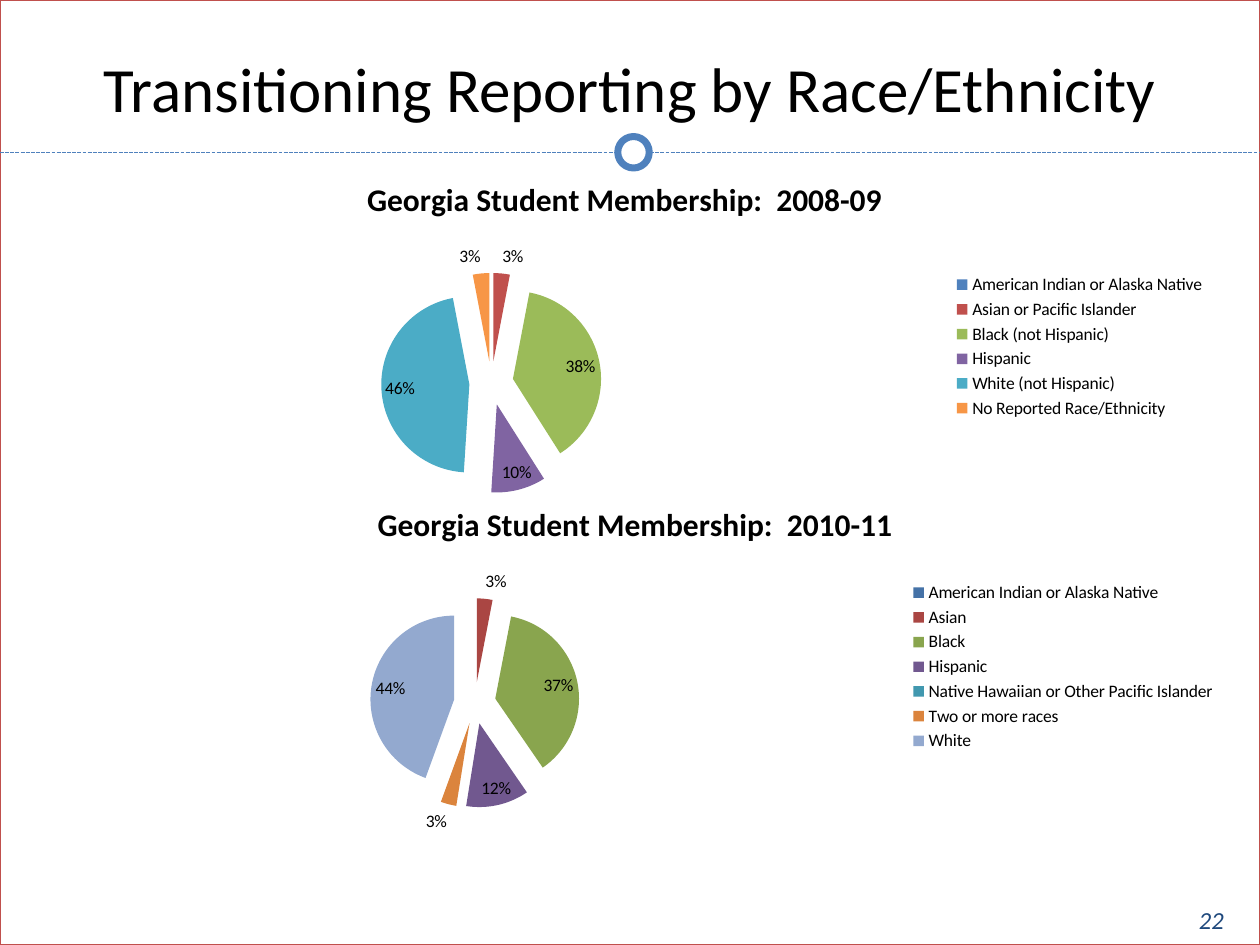
from dataclasses import dataclass

from lxml import etree
from pptx import Presentation
from pptx.chart.data import CategoryChartData
from pptx.dml.color import RGBColor
from pptx.enum import chart as charts, dml, shapes, text
from pptx.oxml import ns
from pptx.util import Pt

FONT = "Calibri"
BLACK = RGBColor(0, 0, 0)
WHITE = RGBColor(255, 255, 255)
NAVY = RGBColor(0x1F, 0x49, 0x7D)
RED = RGBColor(0xC0, 0x50, 0x4D)
BLUE = RGBColor(0x4F, 0x81, 0xBD)
GREEN = RGBColor(0x9B, 0xBB, 0x59)
PURPLE = RGBColor(0x80, 0x64, 0xA2)
AQUA = RGBColor(0x4B, 0xAC, 0xC6)
ORANGE = RGBColor(0xF7, 0x96, 0x46)
DARK_BLUE = RGBColor(0x45, 0x72, 0xA7)
DARK_RED = RGBColor(0xAA, 0x46, 0x43)
DARK_GREEN = RGBColor(0x89, 0xA5, 0x4E)
DARK_PURPLE = RGBColor(0x71, 0x58, 0x8F)
DARK_AQUA = RGBColor(0x41, 0x98, 0xAF)
DARK_ORANGE = RGBColor(0xDB, 0x84, 0x3D)
PALE_BLUE = RGBColor(0x93, 0xA9, 0xCF)

PAGE_WIDTH, PAGE_HEIGHT = 720, 540
RULE_Y = 87
RING_X, RING_SIZE = 362, 18


@dataclass(frozen=True)
class Frame:
    left: float
    top: float
    width: float
    height: float

    def lengths(self) -> tuple:
        return Pt(self.left), Pt(self.top), Pt(self.width), Pt(self.height)


@dataclass(frozen=True)
class Slice:
    label: str
    percent: int
    color: RGBColor


@dataclass(frozen=True)
class Membership:
    title: str
    frame: Frame
    slices: tuple[Slice, ...]


MEMBERSHIPS = (
    Membership("Georgia Student Membership:  2010-11", Frame(24, 276, 678, 210), (
        Slice("American Indian or Alaska Native", 0, DARK_BLUE),
        Slice("Asian", 3, DARK_RED),
        Slice("Black", 37, DARK_GREEN),
        Slice("Hispanic", 12, DARK_PURPLE),
        Slice("Native Hawaiian or Other Pacific Islander", 0, DARK_AQUA),
        Slice("Two or more races", 3, DARK_ORANGE),
        Slice("White", 44, PALE_BLUE),
    )),
    Membership("Georgia Student Membership:  2008-09", Frame(18, 90, 678, 216), (
        Slice("American Indian or Alaska Native", 0, BLUE),
        Slice("Asian or Pacific Islander", 3, RED),
        Slice("Black (not Hispanic)", 38, GREEN),
        Slice("Hispanic", 10, PURPLE),
        Slice("White (not Hispanic)", 46, AQUA),
        Slice("No Reported Race/Ethnicity", 3, ORANGE),
    )),
)


def style_font(font, size: float, color: RGBColor, bold: bool = False, italic: bool = False) -> None:
    font.name = FONT
    font.size = Pt(size)
    font.color.rgb = color
    font.bold = bold
    font.italic = italic


def add_text(page, frame: Frame, words: str, size: float, color: RGBColor,
             align=text.PP_ALIGN.LEFT, italic: bool = False) -> None:
    box = page.shapes.add_textbox(*frame.lengths())
    box.text_frame.word_wrap = True
    box.text_frame.vertical_anchor = text.MSO_ANCHOR.MIDDLE
    para = box.text_frame.paragraphs[0]
    para.alignment = align
    span = para.add_run()
    span.text = words
    style_font(span.font, size, color, italic=italic)


def add_outline(page, kind, frame: Frame, color: RGBColor, weight: float):
    shape = page.shapes.add_shape(kind, *frame.lengths())
    shape.shadow.inherit = False
    shape.fill.background()
    shape.line.color.rgb = color
    shape.line.width = Pt(weight)
    return shape


def add_rule(page) -> None:
    """Draw the dashed line under the title and the ring that sits on it."""
    rule = page.shapes.add_connector(
        shapes.MSO_CONNECTOR.STRAIGHT, Pt(0), Pt(RULE_Y), Pt(PAGE_WIDTH), Pt(RULE_Y))
    rule.line.color.rgb = BLUE
    rule.line.width = Pt(0.75)
    rule.line.dash_style = dml.MSO_LINE.SQUARE_DOT
    etree.SubElement(rule._element.spPr, ns.qn("a:effectLst"))
    corner = RING_SIZE / 2
    ring = add_outline(page, shapes.MSO_SHAPE.OVAL,
                       Frame(RING_X - corner, RULE_Y - corner, RING_SIZE, RING_SIZE), BLUE, 4)
    ring.fill.solid()
    ring.fill.fore_color.rgb = WHITE


def explode(series, percent: int) -> None:
    """Pull all slices of a pie away from its centre."""
    explosion = etree.Element(ns.qn("c:explosion"), val=str(percent))
    series._element.find(ns.qn("c:tx")).addnext(explosion)


def add_pie(page, membership: Membership) -> None:
    data = CategoryChartData()
    data.categories = [part.label for part in membership.slices]
    data.add_series("Series 1", [part.percent for part in membership.slices])
    pie = page.shapes.add_chart(
        charts.XL_CHART_TYPE.PIE, *membership.frame.lengths(), data).chart
    style_font(pie.font, 10, BLACK)

    pie.has_title = True
    span = pie.chart_title.text_frame.paragraphs[0].add_run()
    span.text = membership.title
    style_font(span.font, 18, BLACK, bold=True)
    pie.chart_title.include_in_layout = False

    pie.has_legend = True
    pie.legend.position = charts.XL_LEGEND_POSITION.RIGHT
    pie.legend.include_in_layout = False

    plot = pie.plots[0]
    plot.vary_by_categories = True
    explode(plot.series[0], 25)
    for index, part in enumerate(membership.slices):
        fill = plot.series[0].points[index].format.fill
        fill.solid()
        fill.fore_color.rgb = part.color

    labels = plot.series[0].data_labels
    labels.show_percentage = True
    labels.show_value = False
    labels.number_format = "0%"
    labels.number_format_is_linked = False
    labels.position = charts.XL_LABEL_POSITION.BEST_FIT


def main() -> None:
    deck = Presentation()
    deck.slide_width, deck.slide_height = Pt(PAGE_WIDTH), Pt(PAGE_HEIGHT)
    page = deck.slides.add_slide(deck.slide_layouts[6])
    add_text(page, Frame(678, 511, 39, 29), "22", 14, NAVY, italic=True)
    add_outline(page, shapes.MSO_SHAPE.RECTANGLE,
                Frame(0, 0, PAGE_WIDTH, PAGE_HEIGHT), RED, 0.75)
    add_rule(page)
    add_text(page, Frame(36, 22, 648, 56), "Transitioning Reporting by Race/Ethnicity",
             36, BLACK, text.PP_ALIGN.CENTER)
    for membership in MEMBERSHIPS:
        add_pie(page, membership)
    deck.save("out.pptx")


if __name__ == "__main__":
    main()
